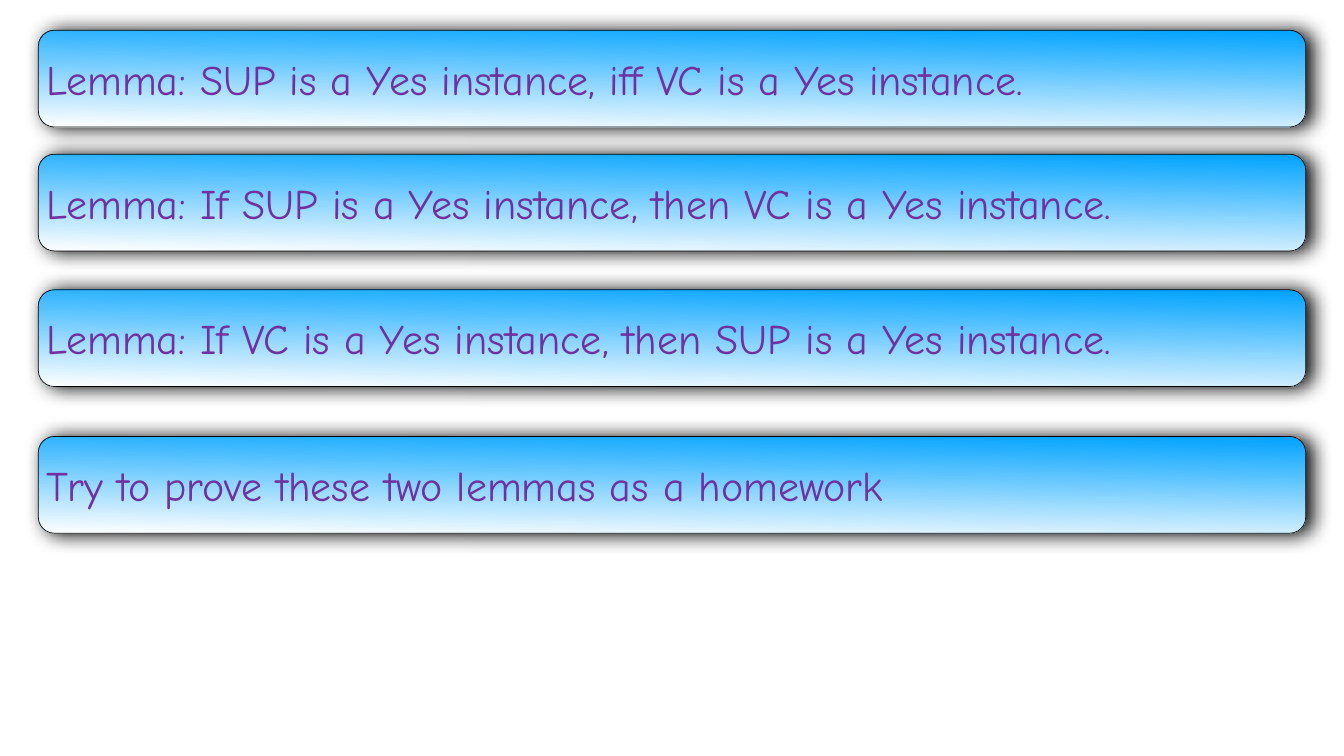
from lxml.etree import SubElement
from pptx import Presentation
from pptx.dml.color import RGBColor
from pptx.enum.shapes import MSO_SHAPE
from pptx.enum.text import MSO_ANCHOR, PP_ALIGN
from pptx.oxml.ns import qn
from pptx.util import Inches, Pt

BLUE = RGBColor(0x00, 0xA2, 0xFF)
WHITE = RGBColor(0xFF, 0xFF, 0xFF)
BLACK = RGBColor(0x00, 0x00, 0x00)
PURPLE = RGBColor(0x70, 0x30, 0xA0)

presentation = Presentation()
presentation.slide_width = Inches(26.67)
presentation.slide_height = Inches(15)
slide = presentation.slides.add_slide(presentation.slide_layouts[6])

# One percent of the slide in each direction
column = presentation.slide_width / 100
row = presentation.slide_height / 100

# Statement bars: top edge in rows, then wording
STATEMENTS = [
    (4, "Lemma: SUP is a Yes instance, iff VC is a Yes instance."),
    (20.4, "Lemma: If SUP is a Yes instance, then VC is a Yes instance."),
    (38.33, "Lemma: If VC is a Yes instance, then SUP is a Yes instance."),
    (57.73, "Try to prove these two lemmas as a homework"),
]
INSET = Inches(0.06)
FRAME_FORMAT = {
    "word_wrap": True,
    "vertical_anchor": MSO_ANCHOR.MIDDLE,
    "margin_left": INSET,
    "margin_top": INSET,
    "margin_right": INSET,
    "margin_bottom": INSET,
}
FONT_FORMAT = {"name": "Comic Neue", "size": Pt(60)}
SHADOW_FORMAT = {"blurRad": Pt(28), "dist": Pt(9), "dir": 0, "rotWithShape": 0}

for top, statement in STATEMENTS:
    shape = slide.shapes.add_shape(
        MSO_SHAPE.ROUNDED_RECTANGLE,
        round(2.85 * column), round(top * row),
        round(94.3 * column), round(12.8 * row),
    )

    # Gradient fill (angle counts counter-clockwise) and outline
    shape.fill.gradient()
    shape.fill.gradient_angle = 269
    for stop, color in zip(shape.fill.gradient_stops, (BLUE, WHITE)):
        stop.color.rgb = color
    shape.line.color.rgb = BLACK
    shape.line.width = Pt(1)

    # Soft shadow to the right
    shape.shadow.inherit = False
    effects = shape._element.spPr.find(qn("a:effectLst"))
    shadow = SubElement(effects, qn("a:outerShdw"))
    for name, value in SHADOW_FORMAT.items():
        shadow.set(name, str(value))
    shadow_color = SubElement(shadow, qn("a:srgbClr"), val=str(BLACK))
    SubElement(shadow_color, qn("a:alpha"), val="97000")

    # Wording
    frame = shape.text_frame
    for name, value in FRAME_FORMAT.items():
        setattr(frame, name, value)
    paragraph = frame.paragraphs[0]
    paragraph.alignment = PP_ALIGN.LEFT
    run = paragraph.add_run()
    run.text = statement
    for name, value in FONT_FORMAT.items():
        setattr(run.font, name, value)
    run.font.color.rgb = PURPLE

presentation.save("out.pptx")
